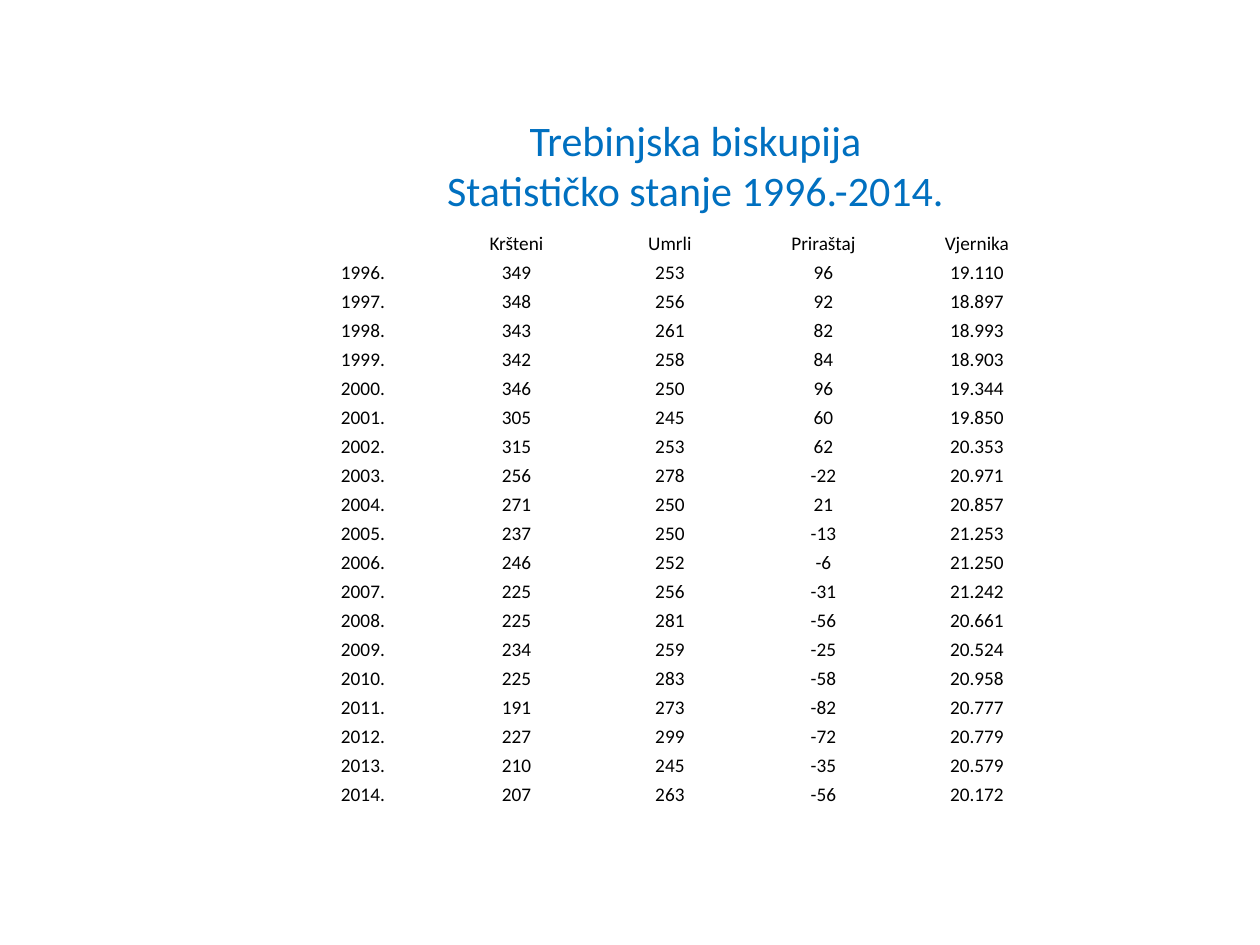
from copy import deepcopy

from pptx import Presentation
from pptx.dml.color import RGBColor
from pptx.enum.text import MSO_ANCHOR as Anchor, PP_ALIGN as Align
from pptx.oxml.ns import qn
from pptx.util import Cm, Pt

HEADER = ["", "Kršteni", "Umrli", "Priraštaj", "Vjernika"]
FIRST_YEAR = 1996
# baptised, died, number of faithful
FIGURES = [
    (349, 253, "19.110"), (348, 256, "18.897"), (343, 261, "18.993"),
    (342, 258, "18.903"), (346, 250, "19.344"), (305, 245, "19.850"),
    (315, 253, "20.353"), (256, 278, "20.971"), (271, 250, "20.857"),
    (237, 250, "21.253"), (246, 252, "21.250"), (225, 256, "21.242"),
    (225, 281, "20.661"), (234, 259, "20.524"), (225, 283, "20.958"),
    (191, 273, "20.777"), (227, 299, "20.779"), (210, 245, "20.579"),
    (207, 263, "20.172"),
]


def format_runs(p, size, color):
    p.alignment = Align.CENTER
    for r in p.runs:
        r.font.name = "Calibri"
        r.font.size = Pt(size)
        r.font.color.rgb = RGBColor.from_string(color)


prs = Presentation()
prs.slide_width, prs.slide_height = Cm(25.4), Cm(19.05)
s = prs.slides.add_slide(prs.slide_layouts[5])

# Title
title = s.shapes.title
title.left, title.top, title.width, title.height = Cm(3.2), Cm(1.73), Cm(21.64), Cm(3.18)
tf = title.text_frame
tf.text = "Trebinjska biskupija\vStatističko stanje 1996.-2014."
tf.vertical_anchor = Anchor.MIDDLE
p = tf.paragraphs[0]
format_runs(p, 24, "0070C0")
# The line break needs the runs' size too, or it makes the first line taller
p._p.find(qn("a:br")).append(deepcopy(p.runs[0].font._element))

# Table: the increase is baptised minus died
rows = [HEADER]
for year, (baptised, died, faithful) in enumerate(FIGURES, FIRST_YEAR):
    rows.append([f"{year}.", str(baptised), str(died), str(baptised - died), faithful])

table = s.shapes.add_table(len(rows), len(HEADER), Cm(5.77), Cm(4.57), Cm(15.47), Cm(11.71)).table
table.first_row = table.horz_banding = False
for i, row in enumerate(rows):
    for j, text in enumerate(row):
        cell = table.cell(i, j)
        cell.fill.background()
        cell.margin_left = cell.margin_right = cell.margin_top = cell.margin_bottom = 0
        cell.vertical_anchor = Anchor.BOTTOM
        p = cell.text_frame.paragraphs[0]
        if text:
            p.text = text
            format_runs(p, 11, "000000")
        else:
            # Keeps the empty cell from stretching its row
            p._p.get_or_add_endParaRPr().set("sz", "1100")

prs.save("out.pptx")
